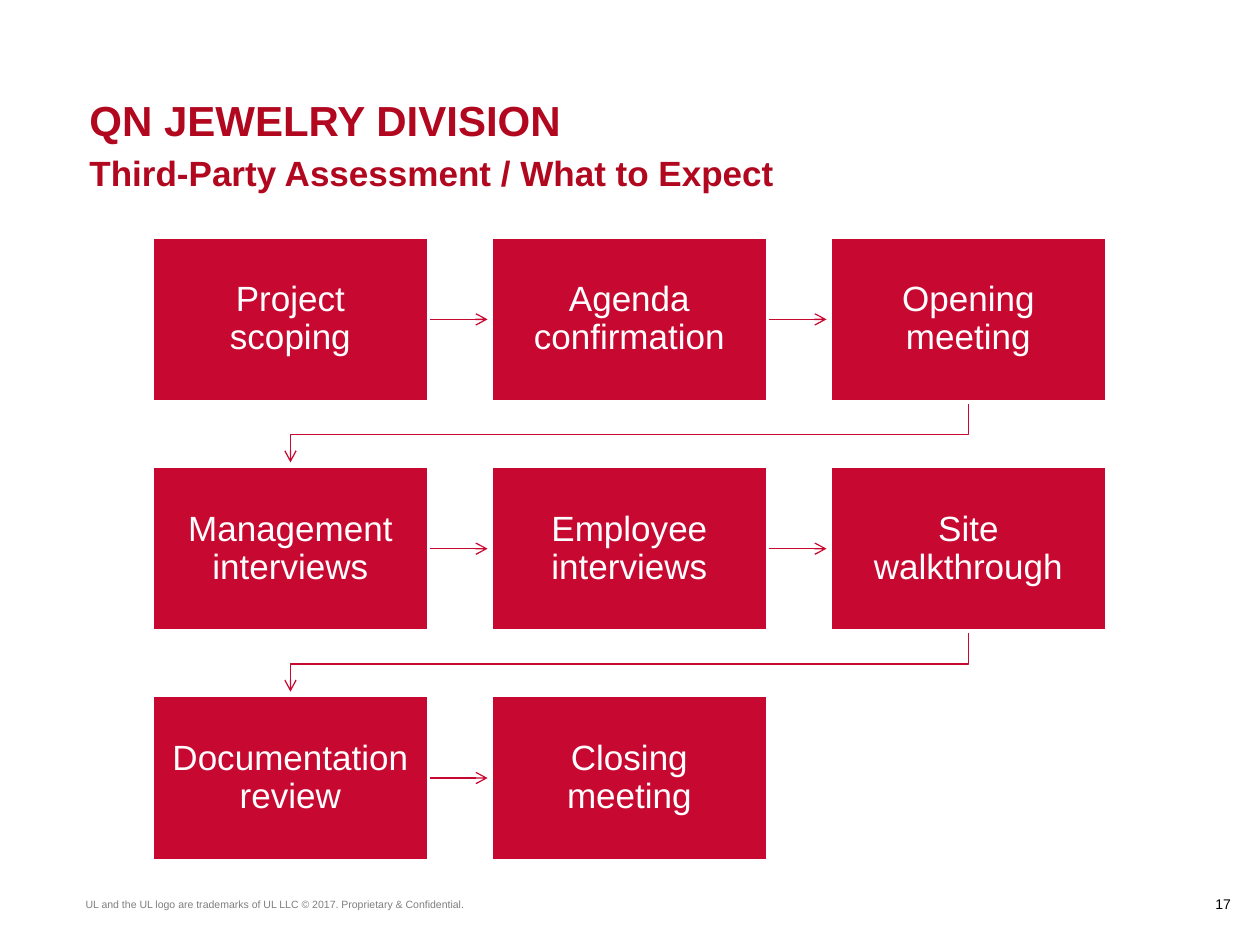
from dataclasses import dataclass
from itertools import pairwise

from lxml.etree import SubElement
from pptx import Presentation
from pptx.dml.color import RGBColor
from pptx.enum.shapes import MSO_CONNECTOR as Connector, MSO_SHAPE as Shape
from pptx.enum.text import MSO_ANCHOR as Anchor, MSO_AUTO_SIZE as AutoSize, PP_ALIGN as Align
from pptx.oxml.ns import qn
from pptx.util import Inches, Pt

CRIMSON = RGBColor(0xC7, 0x09, 0x32)
HEADING_RED = RGBColor(0xB1, 0x08, 0x20)
WHITE = RGBColor(0xFF, 0xFF, 0xFF)
GREY = RGBColor(0x7F, 0x7F, 0x7F)
BLACK = RGBColor(0, 0, 0)

FONT = "Arial"
COLUMNS = 3
LEFT, TOP = 1.21, 1.88
WIDTH, HEIGHT = 2.19, 1.31
COLUMN_STEP, ROW_STEP = 2.69, 1.82
ARROW_GAP = 0.03
BEND_DROP = 0.26


@dataclass(frozen=True)
class Step:
    label: str
    index: int

    @property
    def row(self) -> int:
        return self.index // COLUMNS

    @property
    def left(self) -> float:
        return LEFT + self.index % COLUMNS * COLUMN_STEP

    @property
    def top(self) -> float:
        return TOP + self.row * ROW_STEP

    @property
    def center(self) -> float:
        return self.left + WIDTH / 2

    @property
    def middle(self) -> float:
        return self.top + HEIGHT / 2

    @property
    def bottom(self) -> float:
        return self.top + HEIGHT


@dataclass(frozen=True)
class FooterItem:
    text: str
    frame: tuple[float, float, float, float]
    size: float
    color: RGBColor
    align: Align
    wrap: bool


LABELS = [
    "Project scoping", "Agenda confirmation", "Opening meeting",
    "Management interviews", "Employee interviews", "Site walkthrough",
    "Documentation review", "Closing meeting",
]
STEPS = [Step(label, index) for index, label in enumerate(LABELS)]

HEADINGS = [("QN JEWELRY DIVISION", 24, 0), ("Third-Party Assessment / What to Expect", 20, 4)]

FOOTER = [
    FooterItem("UL and the UL logo are trademarks of UL LLC © 2017. Proprietary & Confidential.",
               (0.61, 7.09, 3.83, 0.18), 6, GREY, Align.LEFT, True),
    FooterItem("17", (9.55, 7.07, 0.29, 0.21), 8, BLACK, Align.RIGHT, False),
]


def apply(target, **values) -> None:
    for name, value in values.items():
        setattr(target, name, value)


def style_font(font, size: float, color: RGBColor, bold: bool = False) -> None:
    apply(font, name=FONT, size=Pt(size), bold=bold)
    font.color.rgb = color


def set_margins(frame, side: float, end: float) -> None:
    apply(frame, margin_left=Inches(side), margin_right=Inches(side),
          margin_top=Inches(end), margin_bottom=Inches(end))


def add_headings(page) -> None:
    page.shapes.title.element.getparent().remove(page.shapes.title.element)
    body = page.placeholders[1]
    apply(body, left=Inches(0.61), top=Inches(0.7), width=Inches(8.77), height=Inches(0.91))
    frame = body.text_frame
    apply(frame, vertical_anchor=Anchor.TOP, word_wrap=True, auto_size=AutoSize.NONE)
    frame.text = "\n".join(text for text, _, _ in HEADINGS)
    for para, (_, size, before) in zip(frame.paragraphs, HEADINGS):
        apply(para, space_before=Pt(before), alignment=Align.LEFT)
        style_font(para.font, size, HEADING_RED, True)


def add_step(page, step: Step):
    box = page.shapes.add_shape(Shape.RECTANGLE, Inches(step.left), Inches(step.top),
                                Inches(WIDTH), Inches(HEIGHT))
    box.shadow.inherit = False
    box.fill.solid()
    box.fill.fore_color.rgb = CRIMSON
    box.line.color.rgb = WHITE
    box.line.width = Pt(2)
    frame = box.text_frame
    apply(frame, word_wrap=True, vertical_anchor=Anchor.MIDDLE)
    set_margins(frame, 0.15, 0.16)
    para = frame.paragraphs[0]
    para.text = step.label
    apply(para, alignment=Align.CENTER, line_spacing=0.9)
    style_font(para.font, 20, WHITE)
    return box


def style_arrow(arrow) -> None:
    arrow.line.color.rgb = CRIMSON
    arrow.line.width = Pt(0.75)
    SubElement(arrow.line._get_or_add_ln(), qn("a:tailEnd"), type="arrow")


def add_straight_arrow(page, start: Step, end: Step, start_box):
    arrow = page.shapes.add_connector(
        Connector.STRAIGHT, Inches(start.left + WIDTH), Inches(start.middle),
        Inches(end.left - ARROW_GAP), Inches(end.middle))
    arrow.begin_connect(start_box, 3)
    style_arrow(arrow)
    SubElement(arrow.element.spPr, qn("a:effectLst"))
    return arrow


def add_return_arrow(page, start: Step, end: Step):
    bend = start.bottom + BEND_DROP
    points = [(start.center, start.bottom), (start.center, bend),
              (end.center, bend), (end.center, end.top - ARROW_GAP)]
    corners = [(Inches(x), Inches(y)) for x, y in points]
    builder = page.shapes.build_freeform(*corners[0])
    builder.add_line_segments(corners[1:], close=False)
    arrow = builder.convert_to_shape()
    arrow.shadow.inherit = False
    arrow.fill.background()
    style_arrow(arrow)
    return arrow


def add_flow(page) -> None:
    boxes = [add_step(page, step) for step in STEPS]
    for start, end in pairwise(STEPS):
        if start.row == end.row:
            arrow = add_straight_arrow(page, start, end, boxes[start.index])
        else:
            arrow = add_return_arrow(page, start, end)
        boxes[0].element.addprevious(arrow.element)


def add_footer_item(page, item: FooterItem) -> None:
    box = page.shapes.add_textbox(*map(Inches, item.frame))
    frame = box.text_frame
    apply(frame, word_wrap=item.wrap, vertical_anchor=Anchor.BOTTOM)
    set_margins(frame, 0.07, 0.04)
    para = frame.paragraphs[0]
    para.text = item.text
    para.alignment = item.align
    style_font(para.font, item.size, item.color)


def main() -> None:
    deck = Presentation()
    apply(deck, slide_width=Inches(10), slide_height=Inches(7.5))
    page = deck.slides.add_slide(deck.slide_layouts[2])
    for item in FOOTER:
        add_footer_item(page, item)
    add_headings(page)
    add_flow(page)
    deck.save("out.pptx")


if __name__ == "__main__":
    main()
